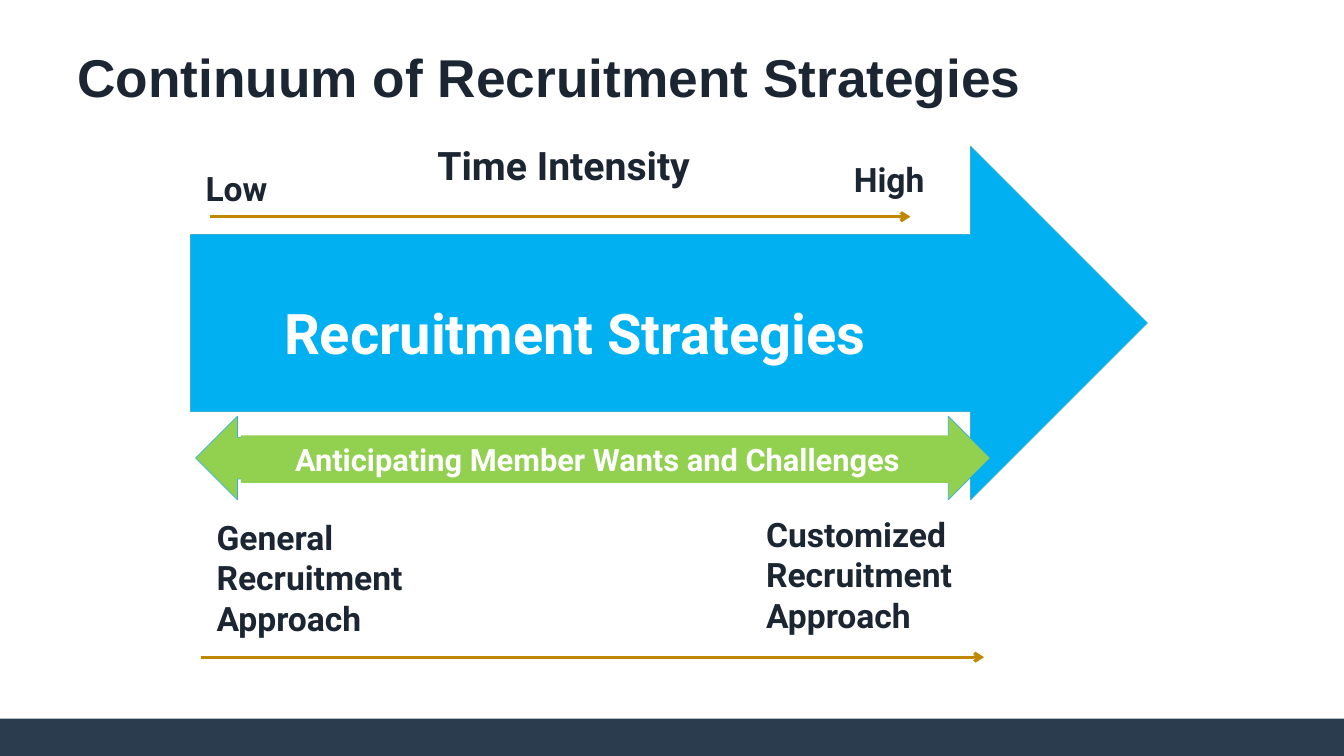
from lxml import etree
from pptx import Presentation
from pptx.dml.color import RGBColor
from pptx.enum.shapes import MSO_CONNECTOR, MSO_SHAPE
from pptx.enum.text import MSO_ANCHOR, PP_ALIGN
from pptx.oxml.ns import qn
from pptx.util import Inches, Pt

NAVY = RGBColor(0x2A, 0x3C, 0x4E)
INK = RGBColor(0x1C, 0x25, 0x32)
BLUE = RGBColor(0x00, 0xB0, 0xF0)
EDGE = RGBColor(0x37, 0xAF, 0xD5)
GREEN = RGBColor(0x92, 0xD0, 0x50)
GOLD = RGBColor(0xBF, 0x88, 0x00)
WHITE = RGBColor(0xFF, 0xFF, 0xFF)

RECTANGLE = MSO_SHAPE.RECTANGLE
RIGHT_ARROW = MSO_SHAPE.RIGHT_ARROW
DOUBLE_ARROW = MSO_SHAPE.LEFT_RIGHT_ARROW
STRAIGHT = MSO_CONNECTOR.STRAIGHT
TOP, MIDDLE = MSO_ANCHOR.TOP, MSO_ANCHOR.MIDDLE
CENTER = PP_ALIGN.CENTER

deck = Presentation()
deck.slide_width = Inches(13.33)
deck.slide_height = Inches(7.5)
page = deck.slides.add_slide(deck.slide_layouts[6])


def add_filled(preset, place, fill, edge=None):
    shape = page.shapes.add_shape(preset, *map(Inches, place))
    shape.shadow.inherit = False
    shape.fill.solid()
    shape.fill.fore_color.rgb = fill
    if edge is None:
        shape.line.fill.background()
    else:
        shape.line.color.rgb = edge
        shape.line.width = Pt(0.5)
    return shape


def write(box, text, size, color, font="Roboto", anchor=TOP):
    """Fill a shape or text box with bold text and return its paragraphs."""
    frame = box.text_frame
    frame.word_wrap = True
    frame.vertical_anchor = anchor
    frame.text = text
    for para in frame.paragraphs:
        para.font.name = font
        para.font.size = Pt(size)
        para.font.bold = True
        para.font.color.rgb = color
    return frame.paragraphs


# Footer band and arrows
add_filled(RECTANGLE, (0, 7.13, 13.33, 0.38), NAVY)
add_filled(RIGHT_ARROW, (1.89, 1.45, 9.49, 3.51), BLUE, EDGE)
add_filled(DOUBLE_ARROW, (1.94, 4.13, 7.88, 0.83), GREEN, EDGE)
banner = add_filled(RECTANGLE, (2.39, 4.32, 7.07, 0.47), GREEN)
for para in write(banner, "Anticipating Member Wants and Challenges", 22, WHITE,
                  anchor=MIDDLE):
    para.alignment = CENTER

# Labels: text, place, size, colour
labels = [
    ("General Recruitment\vApproach", (2.05, 5.08, 2.52, 1.31), 24, INK),
    ("Customized\vRecruitment\nApproach", (7.5, 5.05, 2.72, 1.31), 24, INK),
    ("Low", (1.94, 1.62, 1.22, 0.51), 24, INK),
    ("High", (8.37, 1.53, 0.98, 0.51), 24, INK),
    ("Time Intensity", (4.24, 1.35, 3.17, 0.57), 28, INK),
    ("Recruitment Strategies", (2.72, 2.91, 6.92, 0.77), 40, WHITE),
]
for text, place, size, color in labels:
    write(page.shapes.add_textbox(*map(Inches, place)), text, size, color)

# Scale lines: start, end, height on the page
for start, end, level in [(2.08, 9.03, 2.15), (1.99, 9.76, 6.52)]:
    scale = page.shapes.add_connector(
        STRAIGHT, Inches(start), Inches(level), Inches(end), Inches(level))
    scale.line.color.rgb = GOLD
    scale.line.width = Pt(2.25)
    etree.SubElement(scale.line._get_or_add_ln(), qn("a:tailEnd"), type="arrow")
    etree.SubElement(scale._element.spPr, qn("a:effectLst"))

# Title
title = page.shapes.add_textbox(Inches(0.67), Inches(0.46), Inches(12), Inches(1.28))
for para in write(title, "Continuum of Recruitment Strategies", 38, INK, "Arial"):
    para.line_spacing = 0.9

deck.save("out.pptx")
